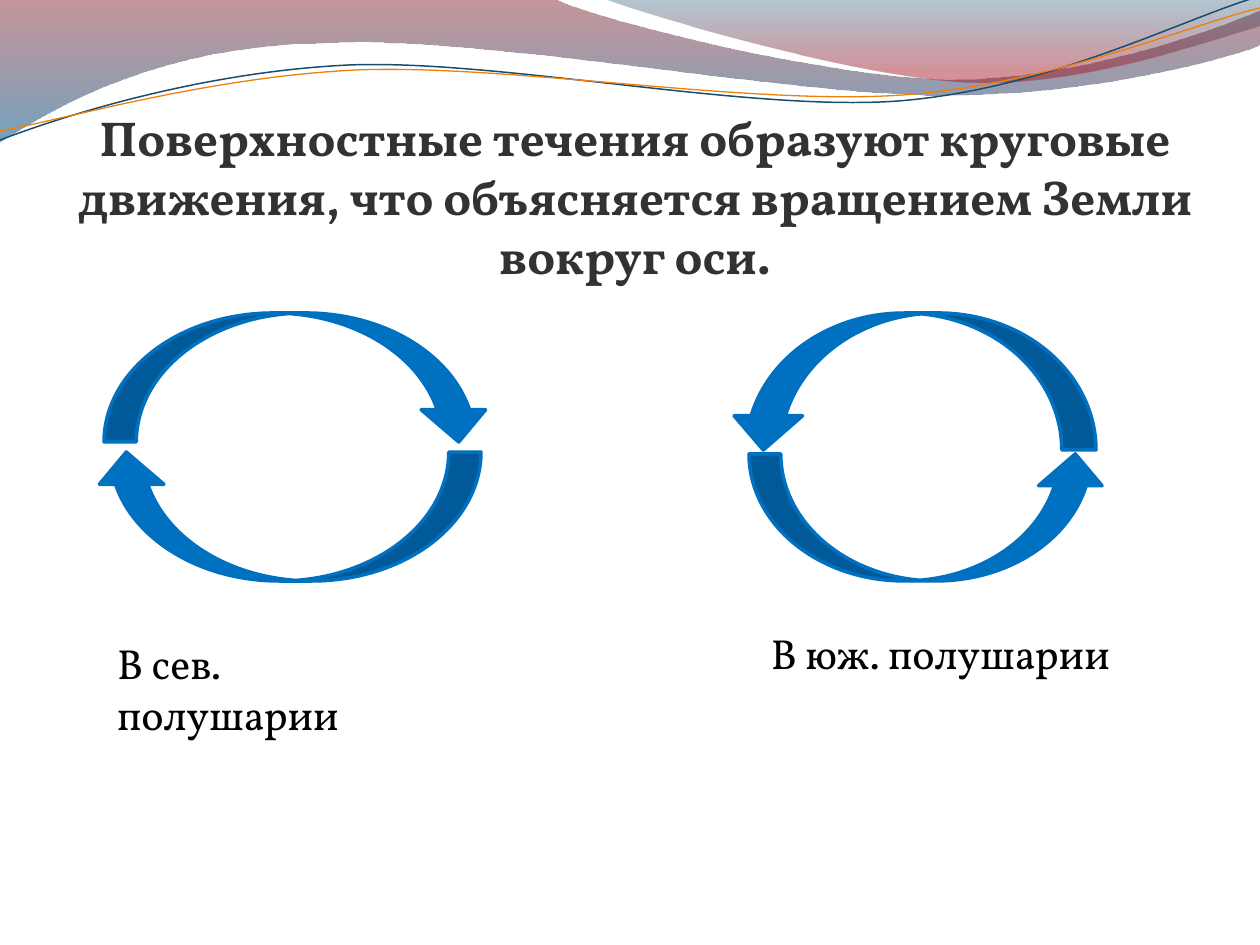
from lxml import etree
from pptx import Presentation
from pptx.dml.color import RGBColor
from pptx.enum.shapes import MSO_SHAPE
from pptx.enum.text import MSO_ANCHOR, MSO_AUTO_SIZE, PP_ALIGN
from pptx.oxml.ns import qn
from pptx.util import Pt

PX = 914400 / 126
FONT = "Vollkorn"
BLUE = "0070C0"
DOWN, UP = MSO_SHAPE.CURVED_DOWN_ARROW, MSO_SHAPE.CURVED_UP_ARROW
CENTER, LEFT = PP_ALIGN.CENTER, PP_ALIGN.LEFT
TOP, BOTTOM = MSO_ANCHOR.TOP, MSO_ANCHOR.BOTTOM
FIXED, GROW = MSO_AUTO_SIZE.NONE, MSO_AUTO_SIZE.SHAPE_TO_FIT_TEXT

# Each step is a line to (x, y) or a cubic curve with two handles and an end
BROAD_WAVE = [
    (0, 0), (554, -1), (600, 21, 837, 79, 955, 79),
    (1075, 79, 1207, 33, 1260, 11), (1261, 45),
    (1239, 55, 1096, 96, 940, 95), (784, 95, 481, 35, 324, 43),
    (163, 45, 58, 105, -1, 142), (0, 0)]
RIGHT_WAVE = [
    (604, -1), (641, 14, 859, 78, 969, 82),
    (1079, 87, 1211, 40, 1260, 26), (1260, 0), (604, -1)]
BLUE_STRAND = [
    (0, 140), (60, 117, 199, 72, 349, 65),
    (498, 59, 747, 112, 898, 101), (1050, 89, 1182, 19, 1257, -3)]
ORANGE_STRAND = [
    (0, 131), (59, 121, 207, 77, 357, 70),
    (508, 64, 752, 106, 903, 95), (1053, 84, 1186, 26, 1260, 8)]


def px(length):
    return round(length * PX)


def color(hex_value):
    return RGBColor.from_string(hex_value)


def add_outline(slide, left, top, steps, closed):
    """Build on the handles, then join each three lines into one curve."""
    points = [(px(left + x), px(top + y))
              for step in steps for x, y in zip(step[::2], step[1::2])]
    builder = slide.shapes.build_freeform(*points[0], scale=1.0)
    builder.add_line_segments(points[1:], close=closed)
    outline = builder.convert_to_shape()
    outline.shadow.inherit = False
    segments = iter(list(outline._element.iter(qn("a:lnTo"))))
    for step in steps[1:]:
        parts = [next(segments) for _ in step[::2]]
        if len(parts) == 3:
            curve = etree.Element(qn("a:cubicBezTo"))
            parts[0].addprevious(curve)
            for part in parts:
                curve.append(part[0])
                part.getparent().remove(part)
    return outline


def add_wave(slide, left, top, steps, stops):
    wave = add_outline(slide, left, top, steps, True)
    wave.line.fill.background()
    wave.fill.gradient()
    wave.fill.gradient_angle = 270
    for stop, (position, hex_value, _) in zip(wave.fill.gradient_stops, stops):
        stop.position = position
        stop.color.rgb = color(hex_value)
    tints = wave._element.iter(qn("a:srgbClr"))
    for tint, (_, _, opacity) in zip(tints, stops):
        etree.SubElement(tint, qn("a:alpha"), val=str(opacity * 1000))


def add_strand(slide, left, top, steps, hex_value, weight):
    strand = add_outline(slide, left, top, steps, False)
    strand.fill.background()
    strand.line.color.rgb = color(hex_value)
    strand.line.width = Pt(weight)


def add_header(slide, left, top):
    add_wave(slide, left, top, BROAD_WAVE,
             [(0, "7E1621", 45), (1, "005689", 55)])
    add_wave(slide, left, top, RIGHT_WAVE,
             [(0, "094467", 30), (0.8, "A10F1F", 45)])
    add_strand(slide, left, top, BLUE_STRAND, "184E6D", 0.85)
    add_strand(slide, left, top, ORANGE_STRAND, "F07F09", 0.75)


def add_text(slide, box, text, size, hex_value="000000", bold=False,
             align=LEFT, anchor=TOP, margins=(13, 6, 13, 6), fit=GROW):
    frame = slide.shapes.add_textbox(*map(px, box)).text_frame
    frame.word_wrap = True
    frame.auto_size = fit
    frame.vertical_anchor = anchor
    (frame.margin_left, frame.margin_top,
     frame.margin_right, frame.margin_bottom) = map(px, margins)
    paragraph = frame.paragraphs[0]
    paragraph.text = text
    paragraph.alignment = align
    font = paragraph.runs[0].font
    font.name, font.size, font.bold = FONT, Pt(size), bold
    font.color.rgb = color(hex_value)


def add_circulation(slide, left, top, arrows, label_box, label):
    """Two curved arrows forming a ring, with the hemisphere below."""
    for kind, x, y, width, height, turn in arrows:
        arrow = slide.shapes.add_shape(
            kind, px(left + x), px(top + y), px(width), px(height))
        arrow.rotation = turn
        arrow.shadow.inherit = False
        arrow.fill.solid()
        arrow.fill.fore_color.rgb = color(BLUE)
        arrow.line.color.rgb = color(BLUE)
        arrow.line.width = Pt(2)
    x, y, width, height = label_box
    add_text(slide, (left + x, top + y, width, height), label, 24)


def main():
    deck = Presentation()
    deck.slide_width, deck.slide_height = px(1260), px(945)
    slide = deck.slides.add_slide(deck.slide_layouts[6])

    # Wavy header and title
    add_header(slide, 0, 0)
    add_text(slide, (63, 98, 1144, 186),
             "Поверхностные течения образуют круговые движения, "
             "что объясняется вращением Земли вокруг оси.",
             28, "323232", True, CENTER, BOTTOM, (0, 6, 0, 0), FIXED)

    # Northern hemisphere: clockwise
    add_circulation(slide, 94, 313,
                    [(DOWN, 10, 0, 387, 129, 0),
                     (DOWN, 0, 139, 387, 129, 180)],
                    (10, 319, 357, 63), "В сев. полушарии")
    # Southern hemisphere: anticlockwise
    add_circulation(slide, 729, 313,
                    [(UP, 0, 0, 367, 137, 180),
                     (UP, 20, 141, 358, 127, 0)],
                    (29, 309, 367, 63), "В юж. полушарии")

    deck.save("out.pptx")


if __name__ == "__main__":
    main()
